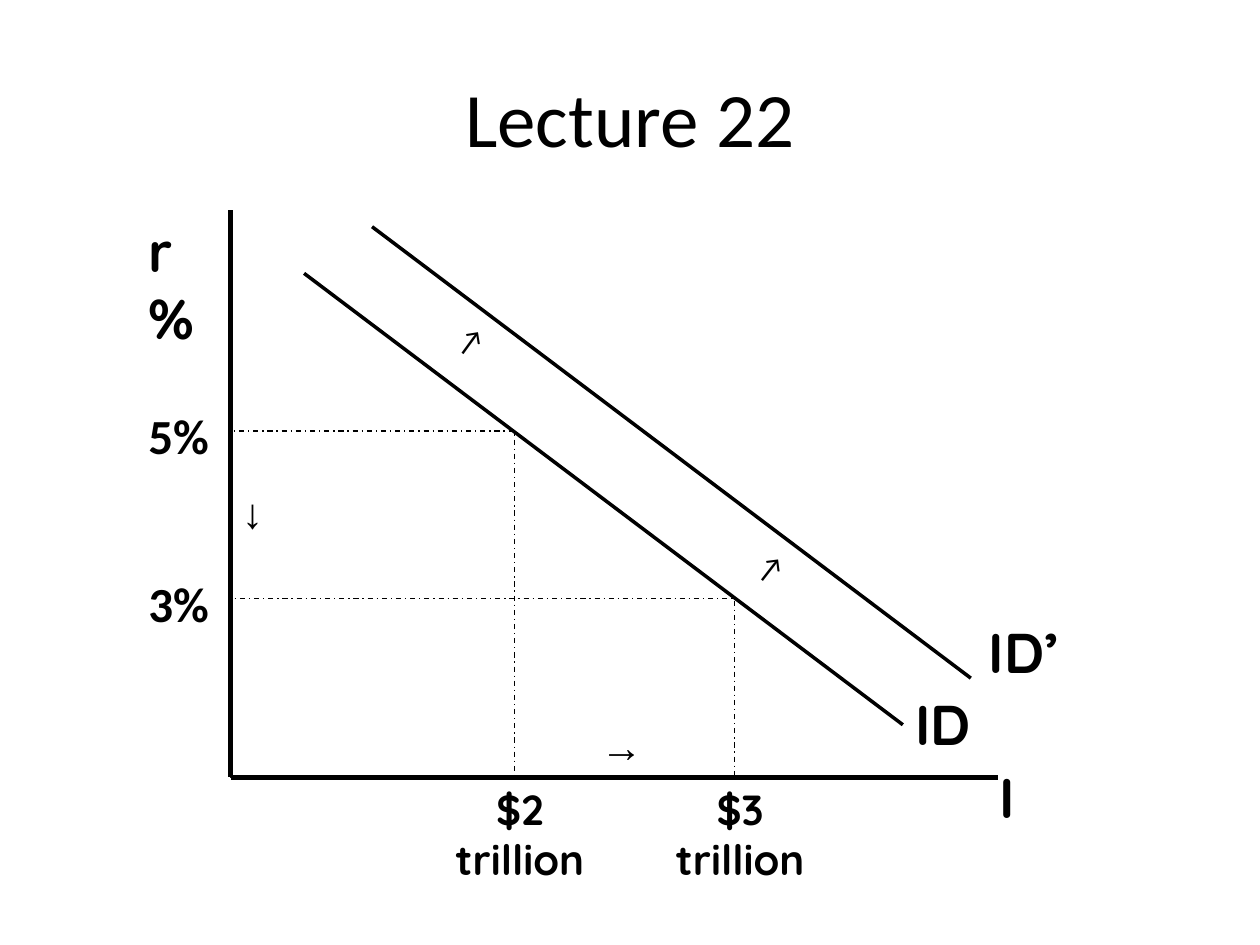
"""Build the lecture slide showing an investment demand shift."""
from dataclasses import dataclass

from lxml import etree
from pptx import Presentation
from pptx import util as u
from pptx.dml import color
from pptx.enum import dml, shapes, text
from pptx.oxml import ns


@dataclass(frozen=True)
class Theme:
    """Colours, fonts, type sizes and line widths of the slide."""
    ink: color.RGBColor = color.RGBColor(0, 0, 0)
    plain: str = "Calibri"
    rounded: str = "Quicksand"
    serif: str = "Times New Roman"
    title: float = 44
    symbol: float = 32
    rate: float = 28
    amount: float = 24
    small_arrow: float = 18
    axis: float = 2.5
    curve: float = 2
    guide: float = 0.75


THEME = Theme()


def add_label(slide, box, wording, font, size, bold=False, centred=False, rotation=0):
    """Write a label in a box given in centimetres and return its shape."""
    label = slide.shapes.add_textbox(*map(u.Cm, box))
    label.rotation = rotation
    frame = label.text_frame
    frame.text = wording
    frame.word_wrap = True
    paragraph = frame.paragraphs[0]
    paragraph.alignment = text.PP_ALIGN.CENTER if centred else text.PP_ALIGN.LEFT
    run_font = paragraph.runs[0].font
    run_font.name, run_font.size, run_font.bold = font, u.Pt(size), bold
    run_font.color.rgb = THEME.ink
    return label


def add_line(slide, start, end, width):
    """Draw a straight line between two points in centimetres."""
    line = slide.shapes.add_connector(
        shapes.MSO_CONNECTOR.STRAIGHT, *map(u.Cm, (*start, *end)))
    line.line.color.rgb = THEME.ink
    line.line.width = u.Pt(width)
    etree.SubElement(line._element.spPr, ns.qn("a:effectLst"))


def add_guide(slide, box):
    """Draw a dash-dot rectangle from the axes to a point on the curve."""
    guide = slide.shapes.add_shape(shapes.MSO_SHAPE.RECTANGLE, *map(u.Cm, box))
    guide.shadow.inherit = False
    guide.fill.background()
    guide.line.color.rgb = THEME.ink
    guide.line.width = u.Pt(THEME.guide)
    guide.line.dash_style = dml.MSO_LINE.DASH_DOT


def add_title(slide, box):
    """Place the lecture title, centred in its box."""
    title = add_label(slide, box, "Lecture 22", THEME.plain, THEME.title, centred=True)
    title.text_frame.vertical_anchor = text.MSO_ANCHOR.MIDDLE


def add_demand_graph(slide, box):
    """Draw axes, guides, demand curves, labels and arrows within the box."""
    left, top, width, height = box

    def place(x, y):
        return left + x, top + y

    origin = place(0, height)
    add_line(slide, place(0, 0), origin, THEME.axis)
    add_line(slide, origin, place(width, height), THEME.axis)

    for rate, amount, x, y in (("5%", "$2 trillion", 5.72, 4.45),
                               ("3%", "$3 trillion", 10.16, 7.83)):
        add_guide(slide, (*place(0, y), x, height - y))
        add_label(slide, (*place(-1.91, y - 0.64), 1.91, 1.45),
                  rate, THEME.plain, THEME.rate, bold=True)
        add_label(slide, (*place(x - 1.48, height), 3.18, 2.29),
                  amount, THEME.rounded, THEME.amount, bold=True, centred=True)

    for shift_x, shift_y in ((0, 0), (1.37, -0.94)):
        add_line(slide, place(1.48 + shift_x, 1.27 + shift_y),
                 place(13.55 + shift_x, 10.37 + shift_y), THEME.curve)

    for symbol, x, y, label_width in (("r%", -1.91, 0, 1.91), ("I", 15.24, 11, 2.33),
                                      ("ID", 13.55, 9.53, 2.54),
                                      ("ID’", 15.03, 8.08, 2.54)):
        add_label(slide, (*place(x, y), label_width, 1.6),
                  symbol, THEME.rounded, THEME.symbol, bold=True)

    axis_arrow = THEME.serif, THEME.amount
    curve_arrow = THEME.plain, THEME.small_arrow
    for x, y, arrow_width, arrow_height, style, rotation in (
            (-0.1, 5.62, 1.47, 1.27, axis_arrow, 90),
            (7.21, 10.16, 1.35, 1.27, axis_arrow, 0),
            (4.19, 2.03, 1.35, 1.02, curve_arrow, 305.9),
            (10.28, 6.69, 1.14, 1.02, curve_arrow, 307.8)):
        add_label(slide, (*place(x, y), arrow_width, arrow_height),
                  "→", *style, rotation=rotation)


def main():
    """Build and save the presentation."""
    deck = Presentation()
    deck.slide_width, deck.slide_height = u.Cm(25.4), u.Cm(19.05)
    slide = deck.slides.add_slide(deck.slide_layouts[6])
    add_title(slide, (1.27, 0.76, 22.86, 3.18))
    add_demand_graph(slide, (4.65, 4.24, 15.46, 11.43))
    deck.save("out.pptx")


if __name__ == "__main__":
    main()
